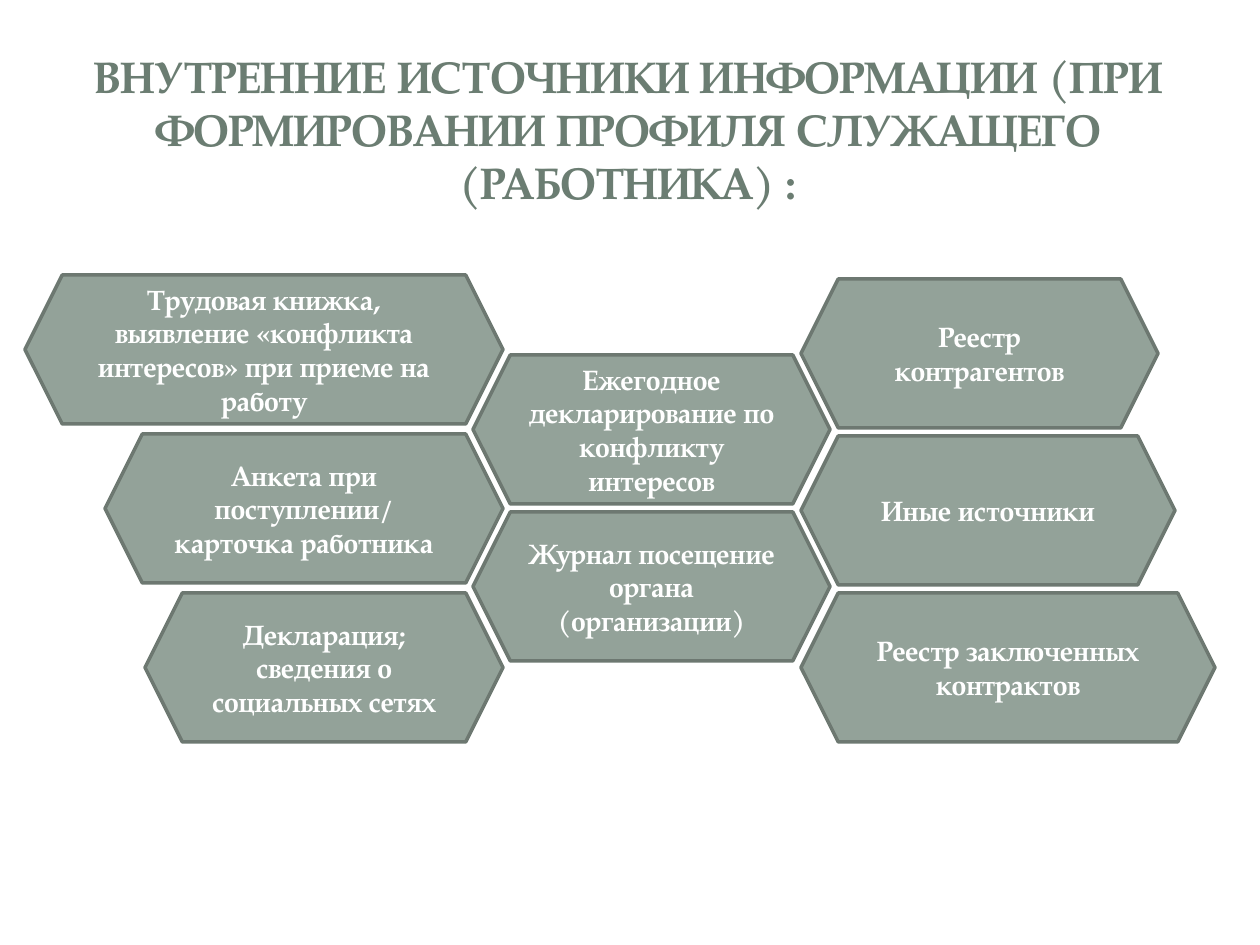
"""Builds a slide of hexagons naming the internal information sources."""
from dataclasses import dataclass

from pptx import Presentation
from pptx.dml.color import RGBColor
from pptx.enum.shapes import MSO_SHAPE
from pptx.enum.text import MSO_ANCHOR, MSO_AUTO_SIZE, PP_ALIGN
from pptx.util import Emu, Inches, Pt


@dataclass(frozen=True)
class Theme:
    font: str = "TeX Gyre Pagella"
    title: RGBColor = RGBColor.from_string("6B7D72")
    fill: RGBColor = RGBColor.from_string("93A299")
    line: RGBColor = RGBColor.from_string("6D7871")
    text: RGBColor = RGBColor.from_string("FFFFFF")
    title_size: float = 25.2
    body_size: float = 16
    line_width: float = 2


theme = Theme()
PX = Inches(1) / 126


def px(n):
    return Emu(round(n * PX))


def write(sp, text, size, color):
    tf = sp.text_frame
    tf.word_wrap = True
    tf.auto_size = MSO_AUTO_SIZE.NONE
    tf.vertical_anchor = MSO_ANCHOR.MIDDLE
    p = tf.paragraphs[0]
    p.alignment = PP_ALIGN.CENTER
    r = p.add_run()
    r.text = text
    r.font.name = theme.font
    r.font.size = Pt(size)
    r.font.bold = True
    r.font.color.rgb = color


prs = Presentation()
prs.slide_width, prs.slide_height = px(1260), px(945)
s = prs.slides.add_slide(prs.slide_layouts[5])

title = s.shapes.title
title.left, title.top, title.width, title.height = px(59), px(57), px(1138), px(144)
write(title, "ВНУТРЕННИЕ ИСТОЧНИКИ ИНФОРМАЦИИ (ПРИ ФОРМИРОВАНИИ ПРОФИЛЯ СЛУЖАЩЕГО (РАБОТНИКА) :",
      theme.title_size, theme.title)

HEX_H = 149
columns = [
    (275, 159, [
        (25, 503, "Трудовая книжка, выявление «конфликта интересов» при приеме на работу"),
        (105, 503, "Анкета при поступлении/ карточка работника"),
        (145, 503, "Декларация; сведения о социальных сетях"),
    ]),
    (355, 157, [
        (473, 830, "Ежегодное декларирование по конфликту интересов"),
        (473, 830, "Журнал посещение органа (организации)"),
    ]),
    (279, 157, [
        (801, 1158, "Реестр контрагентов"),
        (801, 1175, "Иные источники"),
        (801, 1215, "Реестр заключенных контрактов"),
    ]),
]

for top, pitch, items in columns:
    for i, (left, right, text) in enumerate(items):
        sp = s.shapes.add_shape(MSO_SHAPE.HEXAGON, px(left), px(top + i * pitch),
                                px(right - left), px(HEX_H))
        sp.shadow.inherit = False
        sp.fill.solid()
        sp.fill.fore_color.rgb = theme.fill
        sp.line.color.rgb = theme.line
        sp.line.width = Pt(theme.line_width)
        write(sp, text, theme.body_size, theme.text)

prs.save("out.pptx")
